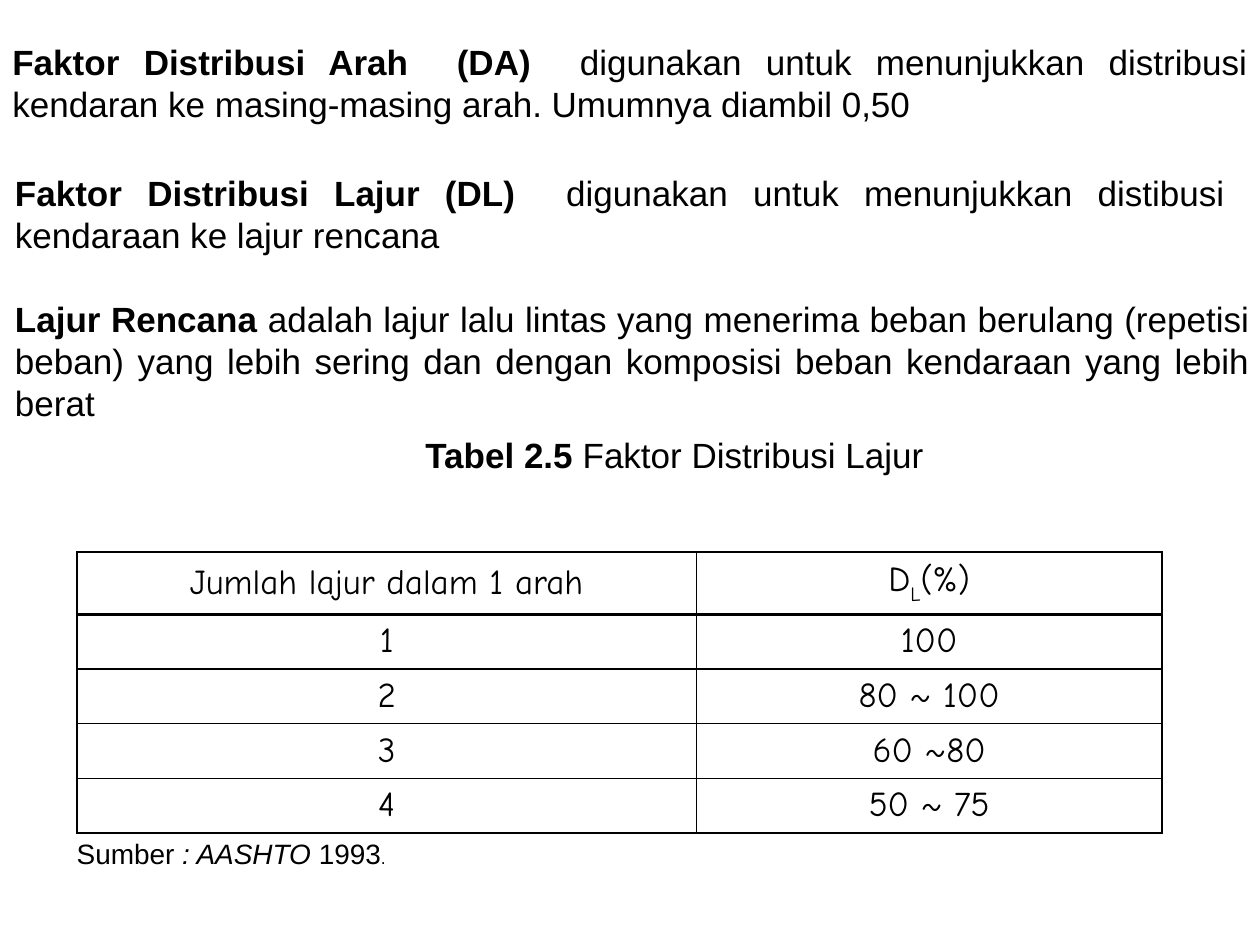
from lxml.etree import SubElement
from pptx import Presentation
from pptx.dml.color import RGBColor
from pptx.enum.text import MSO_ANCHOR, MSO_AUTO_SIZE, PP_ALIGN
from pptx.oxml.ns import qn
from pptx.util import Pt

COLORS = {"text": "000000", "border": "000000"}
BODY_FONT, TABLE_FONT = "Arial", "Comic Neue"
LINE = 24  # height of one line of body text

DIRECTION = [
    ("Faktor Distribusi Arah  (DA)  ", {"bold": True}),
    ("digunakan untuk menunjukkan distribusi kendaran ke masing-masing arah. "
     "Umumnya diambil 0,50", {}),
]
LANE = [
    ("Faktor Distribusi Lajur (DL)  ", {"bold": True}),
    ("digunakan untuk menunjukkan distibusi  kendaraan ke lajur rencana ", {}),
]
DESIGN_LANE = [
    ("Lajur Rencana", {"bold": True}),
    (" adalah lajur lalu lintas yang menerima beban berulang (repetisi beban) "
     "yang lebih sering dan dengan komposisi beban kendaraan yang lebih berat", {}),
]
CAPTION = [("Tabel 2.5", {"bold": True}), (" Faktor Distribusi Lajur", {})]
SOURCE = [("Sumber", {}), (" : AASHTO ", {"italic": True}), ("1993", {}),
          (".", {"size": 10})]

HEADER = [[("Jumlah lajur dalam 1 arah", {})],
          [("D", {}), ("L", {"baseline": -30000}), ("(%)", {})]]
FACTORS = [("1", "100"), ("2", "80 ~ 100"), ("3", "60 ~80"), ("4", "50 ~ 75")]


def add_runs(paragraph, runs, font=BODY_FONT, size=20):
    for text, style in runs:
        run = paragraph.add_run()
        run.text = text
        run.font.name = font
        run.font.size = Pt(style.get("size", size))
        run.font.bold = style.get("bold", False)
        run.font.italic = style.get("italic", False)
        run.font.color.rgb = RGBColor.from_string(COLORS["text"])
        if "baseline" in style:
            run.font._element.set("baseline", str(style["baseline"]))


def add_text(slide, box, paragraphs, align=PP_ALIGN.LEFT, size=20, gap=0, wrap=True):
    """Text box whose paragraphs are each followed by the given gap."""
    frame = slide.shapes.add_textbox(*map(Pt, box)).text_frame
    frame.word_wrap = wrap
    frame.auto_size = MSO_AUTO_SIZE.SHAPE_TO_FIT_TEXT
    frame.vertical_anchor = MSO_ANCHOR.MIDDLE
    frame.margin_bottom = Pt(3.6 + gap)
    for index, runs in enumerate(paragraphs):
        paragraph = frame.paragraphs[0] if index == 0 else frame.add_paragraph()
        paragraph.alignment = align
        if index < len(paragraphs) - 1:
            paragraph.space_after = Pt(gap)
        add_runs(paragraph, runs, size=size)


def set_borders(cell, widths):
    properties = cell._tc.get_or_add_tcPr()
    for side, width in widths.items():
        line = SubElement(properties, qn(f"a:ln{side}"), w=str(Pt(width)))
        fill = SubElement(line, qn("a:solidFill"))
        SubElement(fill, qn("a:srgbClr"), val=COLORS["border"])


def add_factor_table(slide, box, column_widths, row_height):
    rows = [HEADER] + [[[(value, {})] for value in row] for row in FACTORS]
    table_frame = slide.shapes.add_table(len(rows), len(column_widths), *map(Pt, box))
    table = table_frame.table
    table.first_row = table.horz_banding = False
    for column, width in zip(table.columns, column_widths):
        column.width = Pt(width)
    for r, row in enumerate(rows):
        table.rows[r].height = Pt(row_height)
        for c, runs in enumerate(row):
            cell = table.cell(r, c)
            cell.vertical_anchor = MSO_ANCHOR.MIDDLE
            # A heavier rule separates the header from the values
            set_borders(cell, {"L": 1, "R": 1, "T": 2.25 if r == 1 else 1,
                               "B": 2.25 if r == 0 else 1})
            cell.fill.background()
            paragraph = cell.text_frame.paragraphs[0]
            paragraph.alignment = PP_ALIGN.CENTER
            add_runs(paragraph, runs, font=TABLE_FONT)
    table_frame.height = Pt(box[3])


def main():
    presentation = Presentation()
    presentation.slide_width, presentation.slide_height = Pt(720), Pt(540)
    slide = presentation.slides.add_slide(presentation.slide_layouts[6])

    # Definitions
    add_text(slide, (0, 19.5, 720, 55.5), [DIRECTION], PP_ALIGN.JUSTIFY)
    add_text(slide, (1.5, 94.5, 720, 175), [LANE, DESIGN_LANE],
             PP_ALIGN.JUSTIFY, gap=LINE)

    # Table with its caption and source
    add_text(slide, (236, 244, 300, 31), [CAPTION])
    add_factor_table(slide, (44, 315.5, 620, 156.25), (354, 266), 29.5)
    add_text(slide, (36.75, 474.5, 192, 26.5), [SOURCE], size=16, wrap=False)

    presentation.save("out.pptx")


if __name__ == "__main__":
    main()
